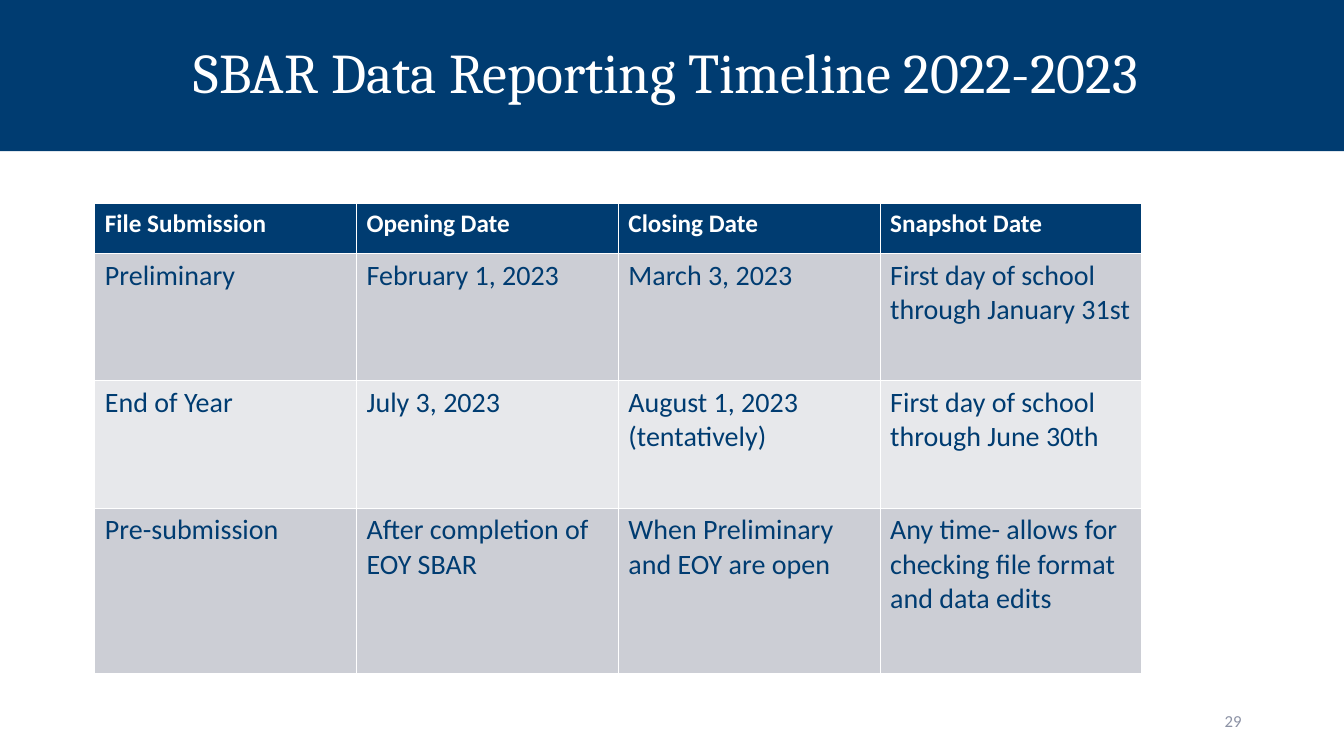
from pptx import Presentation
from pptx.dml.color import RGBColor
from pptx.enum import text as t
from pptx.util import Pt

COLORS = {"navy": "003C71", "white": "FFFFFF", "band_dark": "CCCED5",
          "band_light": "E7E8EB", "page_number": "8C92A5"}
HEADINGS = ["File Submission", "Opening Date", "Closing Date", "Snapshot Date"]
SUBMISSIONS = [
    ["Preliminary", "February 1, 2023", "March 3, 2023",
     "First day of school through January 31st"],
    ["End of Year", "July 3, 2023", "August 1, 2023 (tentatively)",
     "First day of school through June 30th"],
    ["Pre-submission", "After completion of EOY SBAR",
     "When Preliminary and EOY are open",
     "Any time- allows for checking file format and data edits"],
]
ROW_HEIGHTS = [36, 91, 91, 118]


def color(name):
    return RGBColor.from_string(COLORS[name])


def fill_with(part, name):
    part.fill.solid()
    part.fill.fore_color.rgb = color(name)


def write(frame, words, size, ink, font="Calibri", bold=False,
          align=t.PP_ALIGN.LEFT):
    """Put one formatted paragraph into a text frame and return it."""
    frame.text = words
    paragraph = frame.paragraphs[0]
    paragraph.alignment = align
    paragraph.font.name = font
    paragraph.font.size = Pt(size)
    paragraph.font.bold = bold
    paragraph.font.color.rgb = color(ink)
    return paragraph


def place(part, left, top, width, height):
    part.left, part.top = Pt(left), Pt(top)
    part.width, part.height = Pt(width), Pt(height)


def title_band(slide, left, top, width, height):
    title = slide.shapes.title
    place(title, left, top, width, height)
    fill_with(title, "navy")
    frame = title.text_frame
    frame.auto_size = t.MSO_AUTO_SIZE.NONE
    frame.vertical_anchor = t.MSO_ANCHOR.MIDDLE
    heading = write(frame, "SBAR Data Reporting Timeline 2022-2023 ", 40,
                    "white", font="Cambria", align=t.PP_ALIGN.CENTER)
    heading.line_spacing = 0.9


def timeline_table(slide, left, top, width):
    rows = [HEADINGS] + SUBMISSIONS
    timeline = slide.shapes.add_table(
        len(rows), len(HEADINGS), Pt(left), Pt(top), Pt(width),
        Pt(sum(ROW_HEIGHTS))).table
    for row, (entries, height) in enumerate(zip(rows, ROW_HEIGHTS)):
        timeline.rows[row].height = Pt(height)
        header = row == 0
        band = "navy" if header else "band_dark" if row % 2 else "band_light"
        for column, entry in enumerate(entries):
            cell = timeline.cell(row, column)
            fill_with(cell, band)
            write(cell.text_frame, entry, 18 if header else 20,
                  "white" if header else "navy", bold=header)


def page_number(slide, left, top, width, height):
    box = slide.shapes.add_textbox(Pt(left), Pt(top), Pt(width), Pt(height))
    box.text_frame.word_wrap = True
    box.text_frame.vertical_anchor = t.MSO_ANCHOR.MIDDLE
    write(box.text_frame, "29", 12, "page_number", align=t.PP_ALIGN.RIGHT)


def main():
    deck = Presentation()
    deck.slide_width, deck.slide_height = Pt(960), Pt(540)
    slide = deck.slides.add_slide(deck.slide_layouts[5])
    title_band(slide, 0, 0, 960, 108)
    timeline_table(slide, 67.75, 145, 748)
    page_number(slide, 678, 500.5, 216, 28.75)
    deck.save("out.pptx")


if __name__ == "__main__":
    main()
